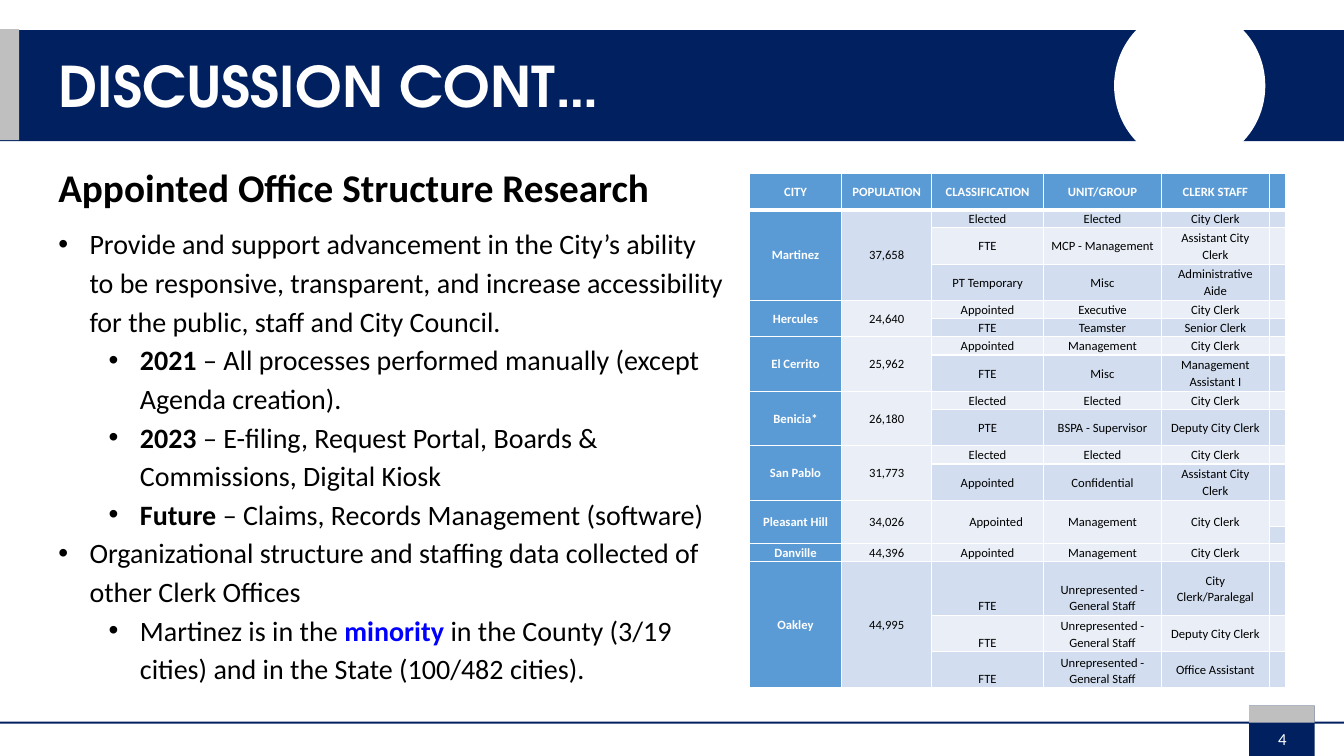
"""Build the slide comparing city clerk office structures."""
from dataclasses import dataclass

from lxml import etree
from pptx import Presentation
from pptx import util as u
from pptx.dml import color
from pptx.enum import shapes, text
from pptx.oxml import ns

NAVY, GREY, WHITE, BLACK = "002060", "BFBFBF", "FFFFFF", "000000"
HEADER_BLUE, BANDS = "5B9BD5", ("EAEFF7", "D2DEEF")
LINK_BLUE = "0000FF"
BODY_FONT, TITLE_FONT = "Calibri", "TeX Gyre Adventor"


@dataclass
class Block:
    left: float
    top: float
    width: float
    height: float
    fill: str
    preset: shapes.MSO_SHAPE = shapes.MSO_SHAPE.RECTANGLE


@dataclass
class Run:
    words: str
    bold: bool = False
    ink: str = BLACK


@dataclass
class Bullet:
    level: int
    runs: list[Run]


@dataclass
class City:
    name: str
    population: str
    staff: list[tuple[str, str, str]]
    rows: int
    anchor: text.MSO_ANCHOR = text.MSO_ANCHOR.MIDDLE


BLOCKS = [
    Block(0, 0.3, 13.33, 1.1, NAVY),
    Block(11.05, 0.07, 1.5, 1.56, WHITE, shapes.MSO_SHAPE.OVAL),
    Block(0, 0.29, 0.19, 1.1, GREY),
    Block(0, 7.16, 13.33, 0.02, NAVY),
    Block(12.39, 7, 0.65, 0.5, NAVY),
    Block(12.39, 7, 0.65, 0.17, GREY),
]
BULLETS = [
    Bullet(0, [Run("Provide and support advancement in the City’s ability to be responsive, transparent, "
                   "and increase accessibility for the public, staff and City Council.")]),
    Bullet(1, [Run("2021", True), Run(" – All processes performed manually (except Agenda creation).")]),
    Bullet(1, [Run("2023", True), Run(" – E-filing, Request Portal, Boards & Commissions, Digital Kiosk")]),
    Bullet(1, [Run("Future", True), Run(" – Claims, Records Management (software)")]),
    Bullet(0, [Run("Organizational structure and staffing data collected of other Clerk Offices")]),
    Bullet(1, [Run("Martinez is in the "), Run("minority ", True, LINK_BLUE),
               Run("in the County (3/19 cities) and in the State (100/482 cities).")]),
]
HEADINGS = ["CITY", "POPULATION", "CLASSIFICATION", "UNIT/GROUP", "CLERK STAFF", ""]
COLUMN_WIDTHS = [0.92, 0.89, 1.11, 1.17, 1.07, 0.15]
ROW_HEIGHTS = [0.36, 0.18, 0.36, 0.36, 0.18, 0.18, 0.18, 0.36, 0.18,
               0.36, 0.18, 0.36, 0.26, 0.17, 0.18, 0.53, 0.36, 0.36]
GENERAL_STAFF = "Unrepresented - General Staff"
CITIES = [
    City("Martinez", "37,658", [("Elected", "Elected", "City Clerk"),
                                ("FTE", "MCP - Management", "Assistant City Clerk"),
                                ("PT Temporary", "Misc", "Administrative Aide")], 3),
    City("Hercules", "24,640", [("Appointed", "Executive", "City Clerk"),
                                ("FTE", "Teamster", "Senior Clerk")], 2),
    City("El Cerrito", "25,962", [("Appointed", "Management", "City Clerk"),
                                  ("FTE", "Misc", "Management Assistant I")], 2),
    City("Benicia*", "26,180", [("Elected", "Elected", "City Clerk"),
                                ("PTE", "BSPA - Supervisor", "Deputy City Clerk")], 2),
    City("San Pablo", "31,773", [("Elected", "Elected", "City Clerk"),
                                 ("Appointed", "Confidential", "Assistant City Clerk")], 2),
    City("Pleasant Hill", "34,026", [("Appointed", "Management", "City Clerk")], 2),
    City("Danville", "44,396", [("Appointed", "Management", "City Clerk")], 1, text.MSO_ANCHOR.BOTTOM),
    City("Oakley", "44,995", [("FTE", GENERAL_STAFF, role) for role in
                              ("City Clerk/Paralegal", "Deputy City Clerk", "Office Assistant")],
         3, text.MSO_ANCHOR.BOTTOM),
]


def rgb(value: str) -> color.RGBColor:
    return color.RGBColor.from_string(value)


def apply(target, values: dict) -> None:
    for name, value in values.items():
        setattr(target, name, value)


def add_run(paragraph, run: Run, size: float, font: str = BODY_FONT) -> None:
    piece = paragraph.add_run()
    piece.text = run.words
    apply(piece.font, {"size": u.Pt(size), "name": font, "bold": run.bold})
    piece.font.color.rgb = rgb(run.ink)


def add_block(slide, block: Block) -> None:
    shape = slide.shapes.add_shape(block.preset, *map(u.Inches, (block.left, block.top, block.width, block.height)))
    shape.shadow.inherit = False
    shape.fill.solid()
    shape.fill.fore_color.rgb = rgb(block.fill)
    shape.line.fill.background()


def add_text_box(slide, left: float, top: float, width: float, height: float):
    frame = slide.shapes.add_textbox(*map(u.Inches, (left, top, width, height))).text_frame
    frame.word_wrap = True
    return frame


def add_title(slide) -> None:
    title = slide.shapes.title
    apply(title, {"left": u.Inches(0.48), "top": u.Inches(0.46),
                  "width": u.Inches(10.43), "height": u.Inches(0.77)})
    apply(title.text_frame, {"auto_size": text.MSO_AUTO_SIZE.NONE, "vertical_anchor": text.MSO_ANCHOR.MIDDLE})
    paragraph = title.text_frame.paragraphs[0]
    paragraph.alignment = text.PP_ALIGN.LEFT
    add_run(paragraph, Run("DISCUSSION CONT…", True, WHITE), 40, TITLE_FONT)
    title.element.getparent().append(title.element)


def add_bullets(slide) -> None:
    frame = add_text_box(slide, 0.48, 2.15, 6.8, 4.72)
    for index, bullet in enumerate(BULLETS):
        paragraph = frame.add_paragraph() if index else frame.paragraphs[0]
        apply(paragraph, {"level": bullet.level, "line_spacing": 1.15})
        properties = paragraph._p.get_or_add_pPr()
        properties.set("marL", str(u.Inches(0.31 + 0.5 * bullet.level)))
        properties.set("indent", str(u.Inches(-0.31)))
        etree.SubElement(properties, ns.qn("a:buFont"), typeface="Arial")
        etree.SubElement(properties, ns.qn("a:buChar"), char="•")
        for run in bullet.runs:
            add_run(paragraph, run, 20)


def style_cell(cell, fill: str, bottom_width: float) -> None:
    apply(cell, {"margin_left": u.Inches(0.06), "margin_right": u.Inches(0.06),
                 "margin_top": u.Inches(0.01), "margin_bottom": u.Inches(0.01),
                 "vertical_anchor": text.MSO_ANCHOR.MIDDLE})
    for side, width in {"L": 1, "R": 1, "T": 1, "B": bottom_width}.items():
        line = etree.SubElement(cell._tc.get_or_add_tcPr(), ns.qn(f"a:ln{side}"), w=str(u.Pt(width)))
        solid = etree.SubElement(line, ns.qn("a:solidFill"))
        etree.SubElement(solid, ns.qn("a:srgbClr"), val=WHITE)
    cell.fill.solid()
    cell.fill.fore_color.rgb = rgb(fill)


def write_cell(cell, run: Run) -> None:
    paragraph = cell.text_frame.paragraphs[0]
    apply(paragraph, {"alignment": text.PP_ALIGN.CENTER, "line_spacing": 1.07})
    add_run(paragraph, run, 9)


def add_city(table, city: City, first_row: int) -> None:
    last_row = first_row + city.rows - 1
    single = len(city.staff) == 1
    for column in range(5 if single else 2):
        if city.rows > 1:
            table.cell(first_row, column).merge(table.cell(last_row, column))
    write_cell(table.cell(first_row, 0), Run(city.name, True, WHITE))
    write_cell(table.cell(first_row, 1), Run(city.population))
    if city.rows == 1:
        table.cell(first_row, 1).vertical_anchor = city.anchor
    for row, member in enumerate(city.staff, first_row):
        for column, words in enumerate(member, 2):
            write_cell(table.cell(row, column), Run(words))
            if column < 4:
                table.cell(row, column).vertical_anchor = city.anchor
    if single and city.rows > 1:
        table.cell(first_row, 2).text_frame.paragraphs[0]._p.get_or_add_pPr().set("indent", str(u.Inches(0.17)))


def add_city_table(slide) -> None:
    table = slide.shapes.add_table(len(ROW_HEIGHTS), len(COLUMN_WIDTHS),
                                   *map(u.Inches, (7.43, 1.72, 5.31, 5.1))).table
    apply(table, {"first_row": False, "horz_banding": False})
    for column, width in zip(table.columns, COLUMN_WIDTHS):
        column.width = u.Inches(width)
    for index, (row, height) in enumerate(zip(table.rows, ROW_HEIGHTS)):
        row.height = u.Inches(height)
        for column, cell in enumerate(row.cells):
            is_heading = index == 0 or column == 0
            style_cell(cell, HEADER_BLUE if is_heading else BANDS[index % 2], 1 if index else 3)
    for column, heading in enumerate(HEADINGS[:-1]):
        write_cell(table.cell(0, column), Run(heading, True, WHITE))
    first_row = 1
    for city in CITIES:
        add_city(table, city, first_row)
        first_row += city.rows
    for cell in table.iter_cells():
        if not cell.text_frame.text:
            etree.SubElement(cell.text_frame.paragraphs[0]._p, ns.qn("a:endParaRPr"), sz="500")


def main() -> None:
    presentation = Presentation()
    apply(presentation, {"slide_width": u.Inches(13.33), "slide_height": u.Inches(7.5)})
    slide = presentation.slides.add_slide(presentation.slide_layouts[5])
    for block in BLOCKS:
        add_block(slide, block)
    page_number = add_text_box(slide, 12.27, 7.13, 0.9, 0.4)
    page_number.vertical_anchor = text.MSO_ANCHOR.MIDDLE
    page_number.paragraphs[0].alignment = text.PP_ALIGN.CENTER
    add_run(page_number.paragraphs[0], Run("4", ink=WHITE), 12)
    subtitle = add_text_box(slide, 0.48, 1.57, 6.63, 0.57)
    add_run(subtitle.paragraphs[0], Run("Appointed Office Structure Research", True), 28)
    add_title(slide)
    add_bullets(slide)
    add_city_table(slide)
    presentation.save("out.pptx")


if __name__ == "__main__":
    main()
